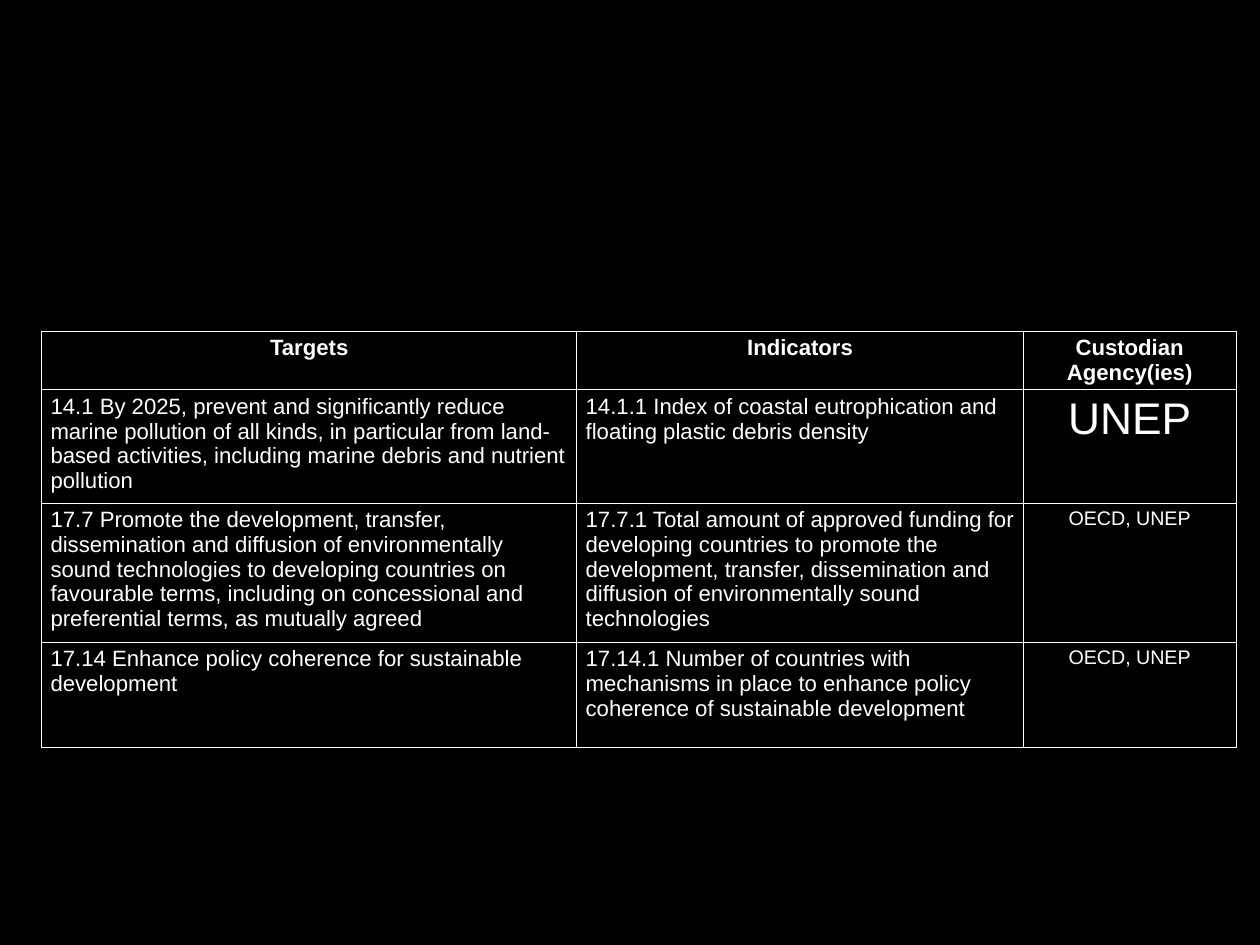
from lxml.etree import SubElement
from pptx import Presentation
from pptx.dml.color import RGBColor
from pptx.enum.text import PP_ALIGN as Align
from pptx.oxml.ns import qn
from pptx.util import Inches, Pt

WHITE, BLACK = "FFFFFF", "000000"
COLUMN_WIDTHS = [6.04, 5.04, 2.4]
ROW_HEIGHTS = [0.65, 1.28, 1.57, 1.19]
AGENCY_COLUMN = 2
BODY_SIZE = 18
AGENCY_SIZES = [18, 36, 16, 16]
ROWS = [
    ("Targets", "Indicators", "Custodian Agency(ies)"),
    ("14.1 By 2025, prevent and significantly reduce marine pollution of all kinds, "
     "in particular from land-based activities, including marine debris and nutrient pollution",
     "14.1.1 Index of coastal eutrophication and floating plastic debris density",
     "UNEP"),
    ("17.7 Promote the development, transfer, dissemination and diffusion of environmentally "
     "sound technologies to developing countries on favourable terms, including on "
     "concessional and preferential terms, as mutually agreed",
     "17.7.1 Total amount of approved funding for developing countries to promote the "
     "development, transfer, dissemination and diffusion of environmentally sound technologies",
     "OECD, UNEP"),
    ("17.14 Enhance policy coherence for sustainable development",
     "17.14.1 Number of countries with mechanisms in place to enhance policy coherence "
     "of sustainable development",
     "OECD, UNEP"),
]


def paint(fill, color):
    fill.solid()
    fill.fore_color.rgb = RGBColor.from_string(color)


def add_borders(cell, color, points):
    """Line all four sides; borders must precede the fill in the cell properties."""
    properties = cell._tc.get_or_add_tcPr()
    for side in ("a:lnL", "a:lnR", "a:lnT", "a:lnB"):
        line = SubElement(properties, qn(side), w=str(Pt(points)))
        solid = SubElement(line, qn("a:solidFill"))
        SubElement(solid, qn("a:srgbClr"), val=color)


deck = Presentation()
deck.slide_width, deck.slide_height = Inches(14.22), Inches(10.67)
page = deck.slides.add_slide(deck.slide_layouts[6])
paint(page.background.fill, BLACK)

frame = page.shapes.add_table(
    len(ROWS), len(COLUMN_WIDTHS), Inches(0.47), Inches(3.74),
    Inches(sum(COLUMN_WIDTHS)), Inches(sum(ROW_HEIGHTS)))
table = frame.table
table.horz_banding = False
for column, width in zip(table.columns, COLUMN_WIDTHS):
    column.width = Inches(width)
for row, height in zip(table.rows, ROW_HEIGHTS):
    row.height = Inches(height)

for row_index, texts in enumerate(ROWS):
    is_header = row_index == 0
    for column_index, text in enumerate(texts):
        is_agency = column_index == AGENCY_COLUMN
        cell = table.cell(row_index, column_index)
        add_borders(cell, WHITE, 1)
        paint(cell.fill, BLACK)
        para = cell.text_frame.paragraphs[0]
        para.alignment = Align.CENTER if is_header or is_agency else Align.LEFT
        span = para.add_run()
        span.text = text
        span.font.name = "Arial"
        span.font.size = Pt(AGENCY_SIZES[row_index] if is_agency else BODY_SIZE)
        span.font.bold = is_header
        paint(span.font.fill, WHITE)

deck.save("out.pptx")
